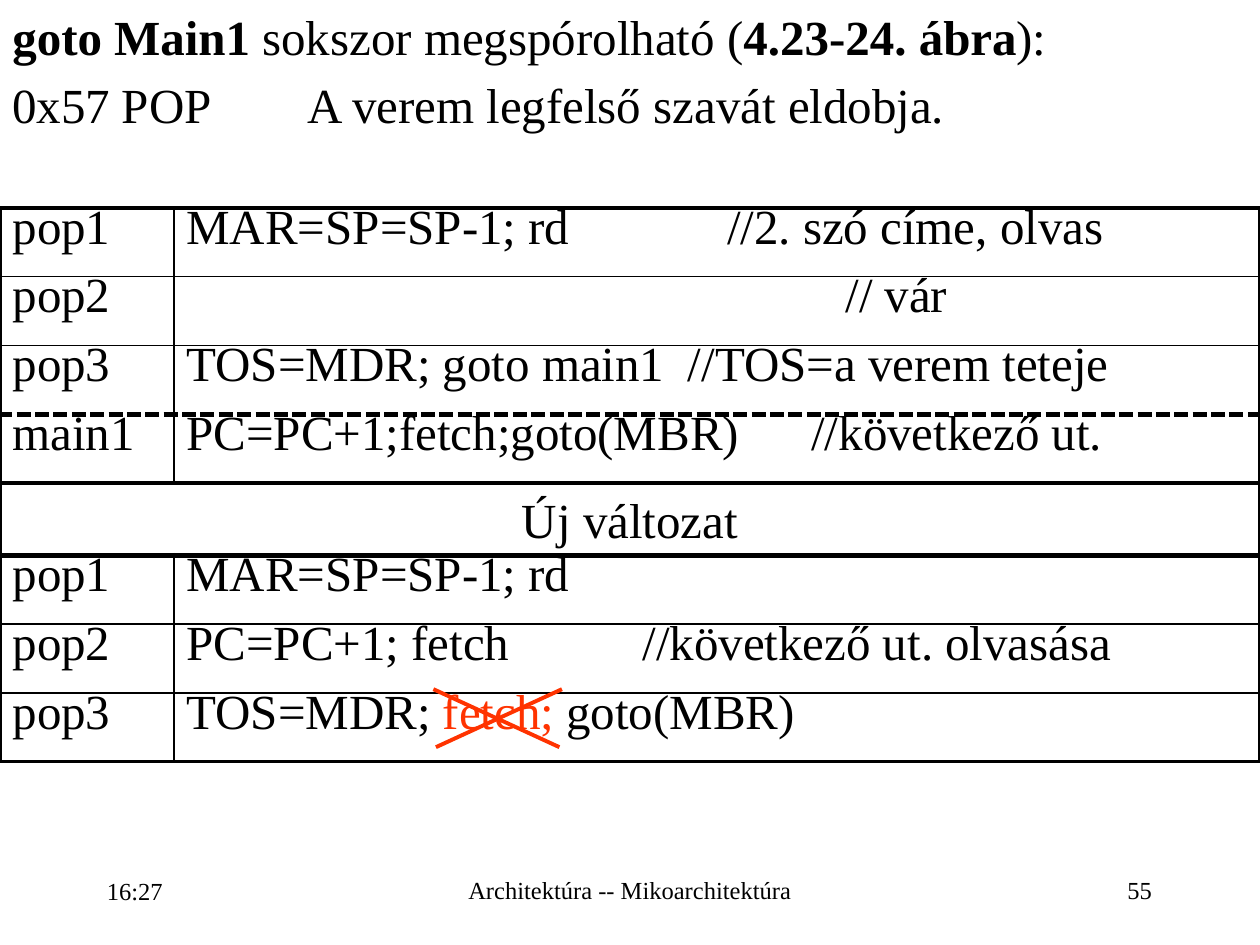
from lxml.etree import SubElement
from pptx import Presentation
from pptx.dml.color import RGBColor
from pptx.enum.shapes import MSO_CONNECTOR
from pptx.enum.text import MSO_ANCHOR, PP_ALIGN
from pptx.oxml.ns import qn
from pptx.util import Inches, Pt

BLACK = RGBColor(0x00, 0x00, 0x00)
RED = RGBColor(0xFF, 0x33, 0x00)
FONT = "Times New Roman"

BOLD = {"bold": True}
INTRO = [
    ([("goto Main1", BOLD), (" sokszor megspórolható (", {}),
      ("4.23-24. ábra", BOLD), ("):", {})], []),
    ([("0x57\tPOP\tA verem legfelső szavát eldobja.", {})], [0.87, 2.34]),
]

MICROCODE = [
    ("pop1", [("MAR=SP=SP-1; rd\t//2. szó címe, olvas", {})], [4.29]),
    ("pop2", [("\t// vár", {})], [5.23]),
    ("pop3", [("TOS=MDR; goto main1\t//TOS=a verem teteje", {})], [3.98]),
    ("main1", [("PC=PC+1;fetch;goto(MBR)\t//következő ut.", {})], [4.96]),
    ("Új változat", None, []),
    ("pop1", [("MAR=SP=SP-1; rd", {})], []),
    ("pop2", [("PC=PC+1; fetch\t//következő ut. olvasása", {})], [3.62]),
    ("pop3", [("TOS=MDR; ", {}), ("fetch;", {"color": RED}), (" goto(MBR)", {})], []),
]
COLUMN_WIDTHS = [1.38, 8.62]
TABLE_TOP, TABLE_HEIGHT = 1.65, 4.37
THIN, OUTER, DIVIDER, DASHED = (1, "solid"), (2.25, "solid"), (3, "solid"), (3, "lgDash")
ROW_RULES = [OUTER, THIN, THIN, DASHED, DIVIDER, DIVIDER, THIN, THIN, OUTER]
COLUMN_RULES = [OUTER, THIN, OUTER]

STRIKE_LINES = [((3.46, 5.93), (4.46, 5.47)), ((3.44, 5.47), (4.44, 5.93))]

FOOTERS = [
    ("16:27", (0.75, 6.81, 2.07, 0.54), PP_ALIGN.LEFT),
    ("Architektúra -- Mikoarchitektúra", (3.42, 6.83, 3.16, 0.49), PP_ALIGN.CENTER),
    ("55", (7.17, 6.83, 2.07, 0.49), PP_ALIGN.RIGHT),
]


def write(paragraph, runs, size, tabs=(), **paragraph_format):
    for name, value in paragraph_format.items():
        setattr(paragraph, name, value)
    for text, changes in runs:
        run = paragraph.add_run()
        run.text = text
        look = {"name": FONT, "size": Pt(size), "bold": False, "color": BLACK, **changes}
        run.font.color.rgb = look.pop("color")
        for name, value in look.items():
            setattr(run.font, name, value)
    if tabs:
        tab_list = SubElement(paragraph._p.get_or_add_pPr(), qn("a:tabLst"))
        for stop in tabs:
            SubElement(tab_list, qn("a:tab"), pos=str(Inches(stop)), algn="l")


def add_text_frame(slide, box, anchor):
    frame = slide.shapes.add_textbox(*map(Inches, box)).text_frame
    frame.word_wrap = True
    frame.vertical_anchor = anchor
    return frame


def set_borders(cell, borders):
    properties = cell._tc.get_or_add_tcPr()
    for side in ("lnL", "lnR", "lnT", "lnB"):
        if side in borders:
            width, dash = borders[side]
            line = SubElement(properties, qn(f"a:{side}"), w=str(Pt(width)))
            fill = SubElement(line, qn("a:solidFill"))
            SubElement(fill, qn("a:srgbClr"), val=str(BLACK))
            SubElement(line, qn("a:prstDash"), val=dash)
    cell.fill.background()


def add_intro(slide):
    frame = add_text_frame(slide, (0, 0, 10, 1.31), MSO_ANCHOR.TOP)
    for index, (runs, tabs) in enumerate(INTRO):
        paragraph = frame.add_paragraph() if index else frame.paragraphs[0]
        write(paragraph, runs, 28, tabs, space_before=Pt(5.6))


def add_microcode(slide):
    table = slide.shapes.add_table(
        len(MICROCODE), len(COLUMN_WIDTHS), Inches(0), Inches(TABLE_TOP),
        Inches(sum(COLUMN_WIDTHS)), Inches(TABLE_HEIGHT)).table
    table.first_row = table.horz_banding = False
    for column, width in zip(table.columns, COLUMN_WIDTHS):
        column.width = Inches(width)
    for row, (label, code, tabs) in enumerate(MICROCODE):
        table.rows[row].height = Inches(TABLE_HEIGHT / len(MICROCODE))
        label_cell, code_cell = table.cell(row, 0), table.cell(row, 1)
        label_format = {"line_spacing": 0.69, "space_before": Pt(8)}
        if code is None:
            label_cell.merge(code_cell)
            label_cell.margin_top = Inches(0.2)
            label_format.update(space_before=Pt(14), alignment=PP_ALIGN.CENTER)
        else:
            write(code_cell.text_frame.paragraphs[0], code, 28, tabs, **label_format)
        write(label_cell.text_frame.paragraphs[0], [(label, {})], 28, **label_format)
        for column, cell in enumerate((label_cell, code_cell)):
            borders = {"lnL": COLUMN_RULES[column], "lnR": COLUMN_RULES[column + 1],
                       "lnT": ROW_RULES[row], "lnB": ROW_RULES[row + 1]}
            if code is None:
                borders.pop("lnL" if column else "lnR")
                if not column:
                    borders["lnR"] = OUTER
            set_borders(cell, borders)


def add_strike(slide):
    for start, end in STRIKE_LINES:
        strike = slide.shapes.add_connector(
            MSO_CONNECTOR.STRAIGHT, *map(Inches, start + end))
        strike.line.color.rgb = RED
        strike.line.width = Pt(2.25)
        SubElement(strike._element.spPr, qn("a:effectLst"))


def add_footers(slide):
    for text, box, alignment in FOOTERS:
        frame = add_text_frame(slide, box, MSO_ANCHOR.MIDDLE)
        write(frame.paragraphs[0], [(text, {})], 14, alignment=alignment, line_spacing=0.93)


def main():
    presentation = Presentation()
    presentation.slide_width, presentation.slide_height = Inches(10), Inches(7.5)
    slide = presentation.slides.add_slide(presentation.slide_layouts[6])
    add_intro(slide)
    add_microcode(slide)
    add_strike(slide)
    add_footers(slide)
    presentation.save("out.pptx")


if __name__ == "__main__":
    main()
